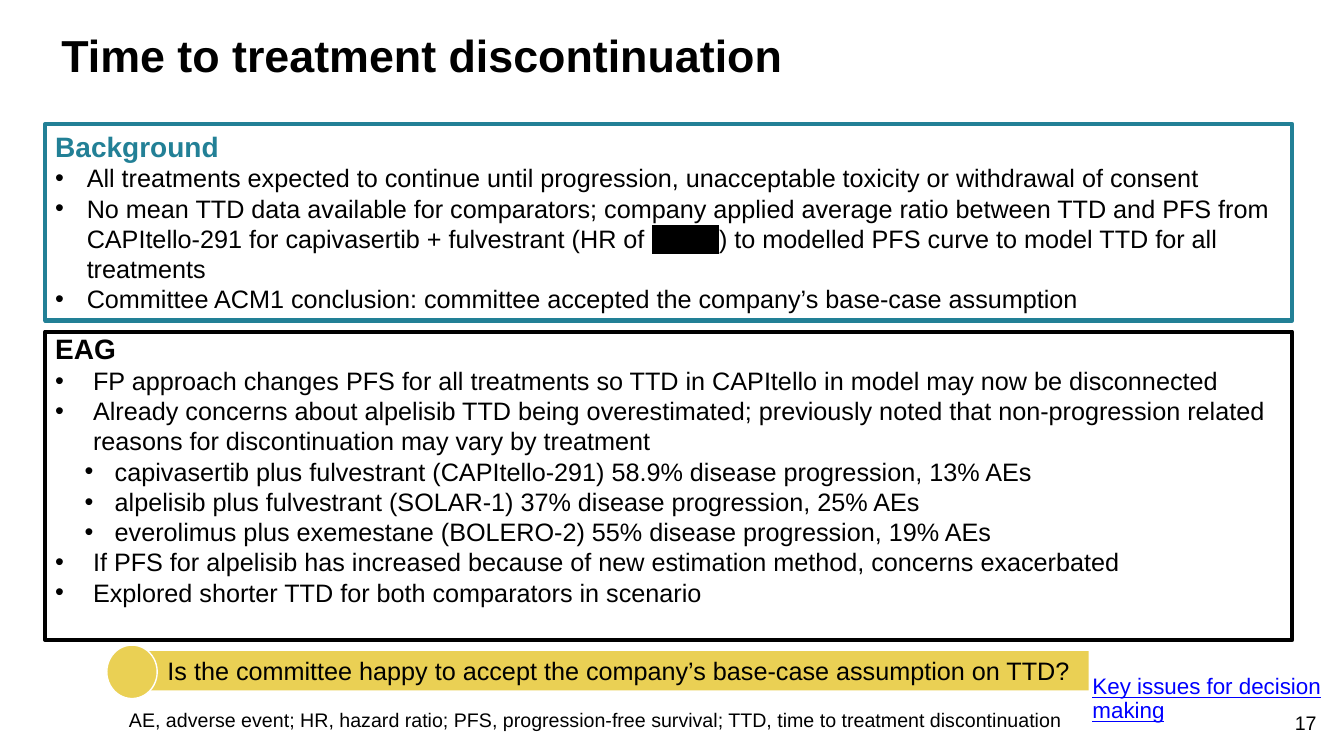
from dataclasses import dataclass

from lxml import etree
from pptx import Presentation
from pptx.dml import color
from pptx.enum import shapes, text
from pptx.oxml import ns
from pptx.util import Pt


@dataclass(frozen=True)
class Theme:
    font: str = "Arial"
    black: str = "000000"
    white: str = "FFFFFF"
    teal: str = "228096"
    yellow: str = "EAD054"
    link: str = "0000FF"
    title: int = 32
    heading: int = 20
    body: int = 18
    reference: int = 16
    small: int = 14


THEME = Theme()
PANEL_LEFT, PANEL_WIDTH = 32.4, 890.6

BACKGROUND = [
    ("All treatments expected to continue until progression, unacceptable toxicity or withdrawal of consent",),
    (
        "No mean TTD data available for comparators; company applied average ratio between TTD and PFS "
        "from CAPItello-291 for capivasertib + fulvestrant (HR of ",
        ("XXXX", {"underline": True, "highlight": THEME.black}),
        ") to modelled PFS curve to model TTD for all treatments",
    ),
    ("Committee ACM1 conclusion: committee accepted the company’s base-case assumption",),
]
EAG_CONCERNS = [
    ("FP approach changes PFS for all treatments so TTD in CAPItello in model may now be disconnected",),
    (
        "Already concerns about alpelisib TTD being overestimated; previously noted that non-progression "
        "related reasons for discontinuation may vary by treatment",
    ),
]
EAG_TRIALS = [
    ("capivasertib plus fulvestrant (CAPItello-291) 58.9% disease progression, 13% AEs",),
    ("alpelisib plus fulvestrant (SOLAR-1) 37% disease progression, 25% AEs",),
    ("everolimus plus exemestane (BOLERO-2) 55% disease progression, 19% AEs",),
]
EAG_RESPONSE = [
    ("If PFS for alpelisib has increased because of new estimation method, concerns exacerbated",),
    ("Explored shorter TTD for both comparators in scenario",),
]


def rgb(value):
    return color.RGBColor.from_string(value)


def write(paragraph, content, size=THEME.body, ink=THEME.black, bold=False, underline=False, highlight=None):
    run = paragraph.add_run()
    run.text = content
    font = run.font
    font.name, font.size, font.bold, font.underline = THEME.font, Pt(size), bold, underline
    font.color.rgb = rgb(ink)
    if highlight:
        mark = etree.Element(ns.qn("a:highlight"))
        etree.SubElement(mark, ns.qn("a:srgbClr"), val=highlight)
        run._r.rPr.find(ns.qn("a:solidFill")).addnext(mark)


def prepare_frame(shape, anchor=text.MSO_ANCHOR.TOP, margins=(7.2, 3.6, 7.2, 3.6)):
    frame = shape.text_frame
    frame.word_wrap = True
    frame.vertical_anchor = anchor
    frame.margin_left, frame.margin_top, frame.margin_right, frame.margin_bottom = map(Pt, margins)
    frame.paragraphs[0].alignment = text.PP_ALIGN.LEFT
    return frame


def add_label(slide, bounds, content, align=text.PP_ALIGN.LEFT, spacing=0.9, **style):
    box = slide.shapes.add_textbox(*map(Pt, bounds))
    paragraph = prepare_frame(box).paragraphs[0]
    paragraph.alignment = align
    paragraph.line_spacing = spacing
    write(paragraph, content, **style)


def add_block(parent, kind, bounds, fill=None, line=None, weight=1):
    shape = parent.shapes.add_shape(kind, *map(Pt, bounds))
    shape.shadow.inherit = False
    if fill:
        shape.fill.solid()
        shape.fill.fore_color.rgb = rgb(fill)
    else:
        shape.fill.background()
    if line:
        shape.line.color.rgb = rgb(line)
        shape.line.width = Pt(weight)
    else:
        shape.line.fill.background()
    return shape


def add_bullets(frame, items, left, hanging):
    for pieces in items:
        paragraph = frame.add_paragraph()
        paragraph.alignment = text.PP_ALIGN.LEFT
        properties = paragraph._p.get_or_add_pPr()
        properties.set("marL", str(Pt(left)))
        properties.set("indent", str(-Pt(hanging)))
        etree.SubElement(properties, ns.qn("a:buFont"), typeface=THEME.font)
        etree.SubElement(properties, ns.qn("a:buChar"), char="•")
        for piece in pieces:
            content, style = (piece, {}) if isinstance(piece, str) else piece
            write(paragraph, content, **style)


def add_panel(slide, top, height, heading, ink, margin=3.6):
    bounds = (PANEL_LEFT, top, PANEL_WIDTH, height)
    shape = add_block(slide, shapes.MSO_SHAPE.RECTANGLE, bounds, line=ink, weight=3)
    frame = prepare_frame(shape, margins=(7.2, margin, 7.2, margin))
    write(frame.paragraphs[0], heading, size=THEME.heading, ink=ink, bold=True)
    return frame


def add_question(slide, content):
    group = slide.shapes.add_group_shape()
    bar = add_block(group, shapes.MSO_SHAPE.RECTANGLE, (99.4, 465.1, 678.2, 28.1), fill=THEME.yellow)
    frame = prepare_frame(bar, text.MSO_ANCHOR.MIDDLE, (20.2, 3.6, 7.2, 3.6))
    write(frame.paragraphs[0], content)
    add_block(group, shapes.MSO_SHAPE.OVAL, (76.3, 460.8, 36, 38.2), fill=THEME.yellow, line=THEME.white)


def main():
    presentation = Presentation()
    presentation.slide_width, presentation.slide_height = Pt(960), Pt(540)
    slide = presentation.slides.add_slide(presentation.slide_layouts[6])

    add_label(slide, (910.8, 504, 36.7, 28.8), "17", align=text.PP_ALIGN.RIGHT, spacing=1, size=THEME.small)
    add_label(slide, (36.7, 20.9, 885.6, 46.8), "Time to treatment discontinuation", size=THEME.title, bold=True)
    add_label(
        slide,
        (85, 504, 778.3, 28.1),
        "AE, adverse event; HR, hazard ratio; PFS, progression-free survival; TTD, time to treatment discontinuation",
        size=THEME.small,
    )

    eag = add_panel(slide, 236.9, 220.3, "EAG", THEME.black, margin=0)
    add_bullets(eag, EAG_CONCERNS, 27, 27)
    add_bullets(eag, EAG_TRIALS, 42.5, 21.5)
    add_bullets(eag, EAG_RESPONSE, 27, 27)

    background = add_panel(slide, 88.6, 140.4, "Background", THEME.teal)
    add_bullets(background, BACKGROUND, 22.5, 22.5)

    add_question(slide, "Is the committee happy to accept the company’s base-case assumption on TTD?")
    add_label(
        slide,
        (773.3, 478.8, 186.7, 44.6),
        "Key issues for decision making",
        size=THEME.reference,
        ink=THEME.link,
        underline=True,
    )
    presentation.save("out.pptx")


if __name__ == "__main__":
    main()
